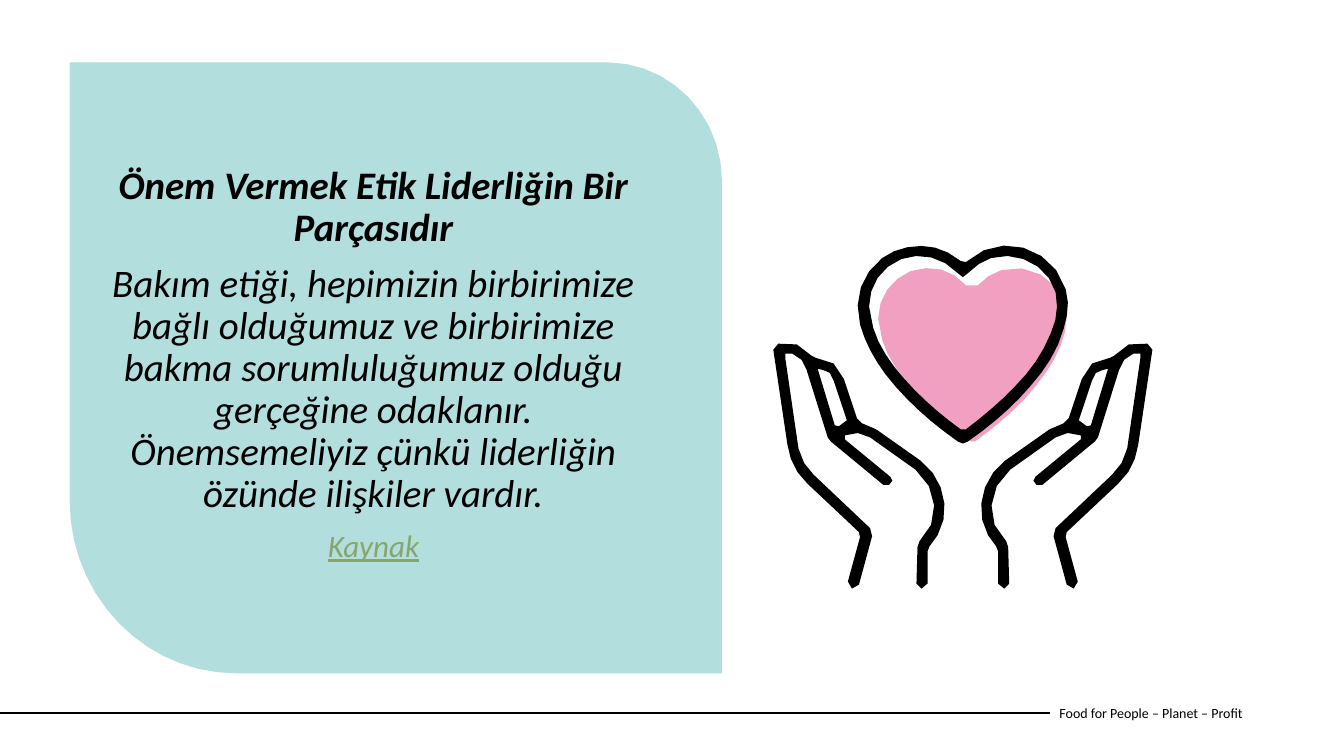
import math

import pptx
import pptx.dml.color
import pptx.enum.shapes
import pptx.enum.text
import pptx.util
from lxml import etree
from pptx.oxml.ns import qn
from pptx.util import Inches

FOOTER = "Food for People – Planet – Profit"
# text, size key, colour key, bold, underlined
MESSAGE = [
    ("Önem Vermek Etik Liderliğin Bir Parçasıdır", "body", "ink", True, False),
    ("Bakım etiği, hepimizin birbirimize bağlı olduğumuz ve birbirimize bakma "
     "sorumluluğumuz olduğu gerçeğine odaklanır. Önemsemeliyiz çünkü liderliğin "
     "özünde ilişkiler vardır.", "body", "ink", False, False),
    ("Kaynak", "source", "source", False, True),
]
THEME = {
    "font": "Calibri",
    "sizes": {"body": 27.8, "source": 22.2, "footer": 10},
    "colours": {"ink": "000000", "card": "B2DEDD", "heart": "F1A0C2", "source": "87A66E"},
}

# Outlines in inches: a start point, then lines (x, y) or Bezier curves (six numbers).
CARD = [[
    (7.16, 6.68), (2.34, 6.68), (1.43, 6.68, 0.69, 5.91, 0.69, 4.96), (0.69, 0.62),
    (6.03, 0.62), (6.65, 0.62, 7.16, 1.15, 7.16, 1.79),
]]
HEART_FILL = [[
    (8.71, 3.16), (8.71, 2.95, 8.84, 2.77, 9.03, 2.69), (9.23, 2.62, 9.45, 2.67, 9.58, 2.83),
    (9.63, 2.88, 9.66, 2.88, 9.7, 2.83), (9.76, 2.76, 9.84, 2.71, 9.93, 2.68),
    (10.2, 2.6, 10.49, 2.76, 10.56, 3.02), (10.6, 3.16, 10.57, 3.3, 10.52, 3.43),
    (10.44, 3.63, 10.31, 3.79, 10.17, 3.95), (10.02, 4.11, 9.85, 4.25, 9.67, 4.38),
    (9.63, 4.38), (9.38, 4.2, 9.15, 4, 8.97, 3.76),
    (8.87, 3.64, 8.79, 3.51, 8.75, 3.37),
]]
HEART_RIM = [[
    (9.14, 2.44), (9.27, 2.44, 9.41, 2.49, 9.53, 2.59), (9.58, 2.6),
    (9.91, 2.29, 10.44, 2.44, 10.57, 2.87), (10.61, 3, 10.59, 3.13, 10.55, 3.26),
    (10.49, 3.48, 10.37, 3.66, 10.22, 3.83), (10.04, 4.04, 9.83, 4.22, 9.6, 4.38),
    (9.55, 4.4), (9.5, 4.38), (9.23, 4.19, 8.98, 3.97, 8.78, 3.71),
    (8.67, 3.56, 8.58, 3.4, 8.53, 3.22), (8.46, 2.96, 8.55, 2.71, 8.75, 2.56),
    (8.86, 2.48, 8.99, 2.44, 9.14, 2.44),
], [
    (8.62, 3.04), (8.66, 3.25), (8.7, 3.39, 8.78, 3.52, 8.87, 3.64),
    (9.06, 3.88, 9.28, 4.08, 9.53, 4.26), (9.58, 4.26),
    (9.75, 4.13, 9.92, 3.99, 10.07, 3.83), (10.22, 3.68, 10.34, 3.51, 10.42, 3.31),
    (10.48, 3.18, 10.5, 3.05, 10.47, 2.9), (10.4, 2.64, 10.1, 2.48, 9.83, 2.56),
    (9.74, 2.59, 9.67, 2.64, 9.6, 2.71), (9.55, 2.75), (9.5, 2.71),
    (9.35, 2.55, 9.13, 2.5, 8.94, 2.57), (8.74, 2.65, 8.62, 2.83, 8.62, 3.04),
]]
LEFT_HAND = [[
    (9.1, 5.43), (9.12, 5.37), (9.33, 5.19, 9.31, 4.84, 9.08, 4.66), (8.63, 4.34),
    (8.55, 4.29, 8.47, 4.28, 8.38, 4.32), (8.38, 4.36), (8.83, 4.73), (8.85, 4.77),
    (8.82, 4.81), (8.76, 4.81), (8.24, 4.38), (8.21, 4.34), (8, 3.67),
    (7.95, 3.57), (7.86, 3.51), (7.79, 3.51), (7.79, 3.56), (7.92, 4.45),
    (7.94, 4.56, 8, 4.64, 8.07, 4.71), (8.63, 5.24), (8.65, 5.32), (8.52, 5.8),
    (8.45, 5.84), (8.41, 5.77), (8.53, 5.33), (8.52, 5.28), (8.01, 4.8),
    (7.89, 4.69, 7.83, 4.56, 7.81, 4.41), (7.67, 3.47), (7.72, 3.41),
    (7.85, 3.38, 7.97, 3.42, 8.05, 3.53), (8.09, 3.55),
    (8.23, 3.55, 8.33, 3.63, 8.37, 3.76), (8.5, 4.15), (8.55, 4.2), (8.69, 4.26),
    (9.13, 4.57), (9.36, 4.74, 9.44, 5.07, 9.3, 5.31), (9.22, 5.42), (9.2, 5.47),
    (9.2, 5.79), (9.14, 5.84), (9.09, 5.79),
], [
    (8.11, 3.66), (8.28, 4.22), (8.32, 4.23), (8.4, 4.17), (8.27, 3.78), (8.23, 3.7),
    (8.16, 3.67),
]]
MIRROR_X = 9.55
CURVE_STEP = 0.18


def colour(key):
    return pptx.dml.color.RGBColor.from_string(THEME["colours"][key])


def mirrored(outline):
    return [[(2 * MIRROR_X - x, y) for x, y in contour] for contour in outline]


def flattened(contour):
    """Turn lines and curves into points; longer curves get more of them."""
    points = [contour[0]]
    for segment in contour[1:]:
        if len(segment) == 2:
            points.append(segment)
            continue
        start, controls = points[-1], (segment[:2], segment[2:4], segment[4:])
        steps = math.ceil(math.dist(start, segment[4:]) / CURVE_STEP)
        for step in range(1, steps + 1):
            t = step / steps
            u = 1 - t
            points.append(tuple(
                u**3 * a + 3 * u * u * t * b + 3 * u * t * t * c + t**3 * d
                for a, b, c, d in zip(start, *controls)))
    return points


def draw_outline(shapes, contours, fill):
    contours = [[(Inches(x), Inches(y)) for x, y in points] for points in contours]
    builder = shapes.build_freeform(*contours[0][0])
    for number, points in enumerate(contours):
        if number:
            builder.move_to(*points[0])
        builder.add_line_segments(points[1:], close=True)
    drawn = builder.convert_to_shape()
    drawn.shadow.inherit = False
    drawn.fill.solid()
    drawn.fill.fore_color.rgb = colour(fill)
    drawn.line.fill.background()


def add_text_frame(slide, *box):
    frame = slide.shapes.add_textbox(*map(Inches, box)).text_frame
    frame.word_wrap = True
    frame.vertical_anchor = pptx.enum.text.MSO_ANCHOR.MIDDLE
    return frame


def write(paragraph, text, size, ink):
    paragraph.text = text
    font = paragraph.runs[0].font
    font.name = THEME["font"]
    font.size = pptx.util.Pt(THEME["sizes"][size])
    font.color.rgb = colour(ink)
    return font


def main():
    deck = pptx.Presentation()
    deck.slide_width, deck.slide_height = Inches(13.33), Inches(7.5)
    slide = deck.slides.add_slide(deck.slide_layouts[6])

    footer = add_text_frame(slide, 10.41, 6.87, 2.73, 0.4)
    write(footer.paragraphs[0], FOOTER, "footer", "ink")
    rule = slide.shapes.add_connector(
        pptx.enum.shapes.MSO_CONNECTOR.STRAIGHT,
        Inches(0), Inches(7.07), Inches(10.41), Inches(7.07))
    rule.line.color.rgb = colour("ink")
    rule.line.width = pptx.util.Pt(1.5)
    etree.SubElement(rule._element.spPr, qn("a:effectLst"))

    card, heart_fill, heart_rim, left_hand = [
        [flattened(contour) for contour in outline]
        for outline in (CARD, HEART_FILL, HEART_RIM, LEFT_HAND)]
    draw_outline(slide.shapes, card, "card")

    message = add_text_frame(slide, 0.94, 1.54, 5.53, 4.16)
    for number, (text, size, ink, bold, underlined) in enumerate(MESSAGE):
        paragraph = message.add_paragraph() if number else message.paragraphs[0]
        paragraph.alignment = pptx.enum.text.PP_ALIGN.CENTER
        paragraph.line_spacing = 0.9
        paragraph.space_before = pptx.util.Pt(10)
        font = write(paragraph, text, size, ink)
        font.italic, font.bold, font.underline = True, bold, underlined

    caring_hands = slide.shapes.add_group_shape().shapes
    for outline, fill in [(heart_fill, "heart"), (mirrored(left_hand), "ink"),
                          (left_hand, "ink"), (heart_rim, "ink")]:
        draw_outline(caring_hands, outline, fill)

    deck.save("out.pptx")


if __name__ == "__main__":
    main()
